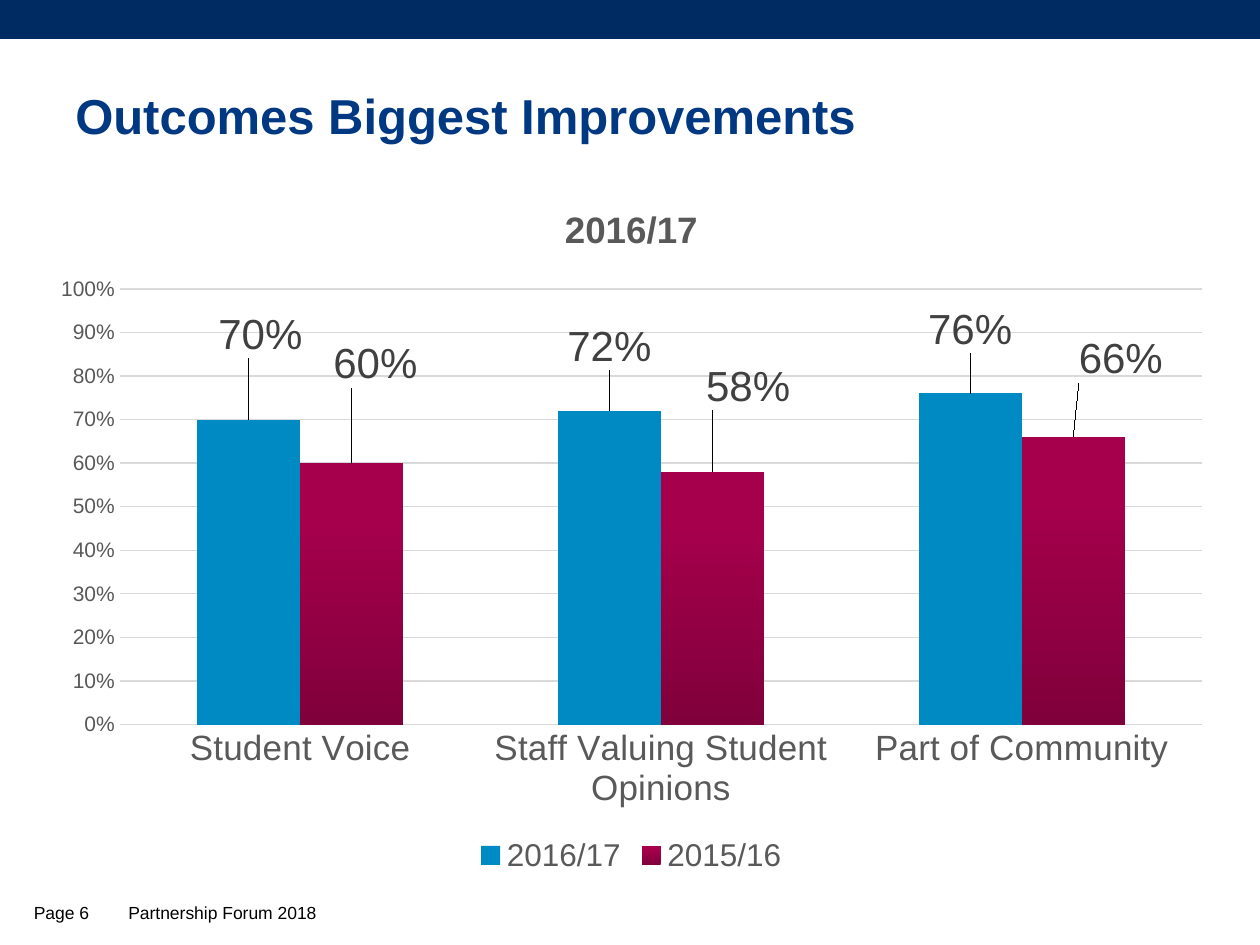
from lxml import etree
from pptx import Presentation
from pptx import util as u
from pptx.chart.data import CategoryChartData
from pptx.dml.color import RGBColor
from pptx.enum import chart as ch, shapes, text
from pptx.oxml import parse_xml
from pptx.oxml.ns import nsdecls, qn

GREY = "595959"
PALE = "D9D9D9"


def paint(code):
    return RGBColor.from_string(code)


def place(parent, **parts):
    layout = parse_xml(f"<c:layout {nsdecls('c')}><c:manualLayout/></c:layout>")
    for key, val in parts.items():
        etree.SubElement(layout[0], qn(f"c:{key}")).set("val", str(val))
    for old in parent.findall(qn("c:layout")):
        parent.remove(old)
    return layout


class Deck:
    face = "Arial"

    def __init__(self, wide, high):
        self.prs = Presentation()
        self.prs.slide_width = u.Inches(wide)
        self.prs.slide_height = u.Inches(high)
        self.slide = self.prs.slides.add_slide(self.prs.slide_layouts[6])

    def style(self, font, size, code, bold=False):
        font.name = self.face
        font.size = u.Pt(size)
        font.bold = bold
        font.color.rgb = paint(code)

    def band(self, box, code):
        shape = self.slide.shapes.add_shape(
            shapes.MSO_SHAPE.RECTANGLE, *map(u.Inches, box))
        shape.shadow.inherit = False
        shape.fill.solid()
        shape.fill.fore_color.rgb = paint(code)
        shape.line.fill.background()

    def label(self, box, words, size, code, bold=False, mid=False):
        frame = self.slide.shapes.add_textbox(*map(u.Inches, box)).text_frame
        frame.word_wrap = True
        if mid:
            frame.vertical_anchor = text.MSO_ANCHOR.MIDDLE
        frame.text = words
        self.style(frame.paragraphs[0].runs[0].font, size, code, bold)

    def chart(self, box, title, cats, rows):
        data = CategoryChartData(number_format="0%")
        data.categories = cats
        for name, vals in rows:
            data.add_series(name, vals)
        chart = self.slide.shapes.add_chart(
            ch.XL_CHART_TYPE.COLUMN_CLUSTERED, *map(u.Inches, box), data).chart
        self.style(chart.font, 10, "000000")
        chart.has_title = True
        chart.chart_title.include_in_layout = False
        frame = chart.chart_title.text_frame
        frame.text = title
        self.style(frame.paragraphs[0].runs[0].font, 21, GREY, True)
        chart.has_legend = True
        chart.legend.position = ch.XL_LEGEND_POSITION.BOTTOM
        chart.legend.include_in_layout = False
        self.style(chart.legend.font, 18, GREY)
        plot = chart.plots[0]
        plot.gap_width = 150
        plot.overlap = 0
        plot.vary_by_categories = False
        area = chart._chartSpace.chart.plotArea
        area.insert(0, place(area, layoutTarget="inner", xMode="edge",
                             yMode="edge", x=0.07, y=0.157, w=0.91, h=0.622))
        self.axes(chart)
        return plot

    def axes(self, chart):
        cat, val = chart.category_axis, chart.value_axis
        for axis, size in ((cat, 20), (val, 12)):
            axis.major_tick_mark = ch.XL_TICK_MARK.NONE
            axis.minor_tick_mark = ch.XL_TICK_MARK.NONE
            self.style(axis.tick_labels.font, size, GREY)
        cat.format.line.color.rgb = paint(PALE)
        cat.format.line.width = u.Pt(1)
        val.format.line.fill.background()
        val.minimum_scale, val.maximum_scale, val.major_unit = 0, 1, 0.1
        val.tick_labels.number_format = "0%"
        val.tick_labels.number_format_is_linked = False
        grid = val.major_gridlines.format.line
        grid.color.rgb = paint(PALE)
        grid.width = u.Pt(0.75)

    def values(self, row, shifts):
        labels = row.data_labels
        labels.show_value = True
        labels.number_format = "0%"
        labels.number_format_is_linked = False
        labels.position = ch.XL_LABEL_POSITION.OUTSIDE_END
        self.style(labels.font, 24, "404040")
        for i, (x, y) in enumerate(shifts):
            mark = row.points[i].data_label
            self.style(mark.font, 24, "404040")
            mark.position = ch.XL_LABEL_POSITION.OUTSIDE_END
            node = row._element.xpath(f".//c:dLbl[c:idx/@val='{i}']")[0]
            node.find(qn("c:idx")).addnext(place(node, x=x, y=y))

    def fade(self, row, stops, angle):
        fill = row.format.fill
        fill.gradient()
        grad = row._element.spPr.find(qn("a:gradFill"))
        steps = "".join(
            f'<a:gs pos="{pos * 1000}"><a:srgbClr val="{code}"/></a:gs>'
            for pos, code in stops)
        grad.getparent().replace(grad, parse_xml(
            f'<a:gradFill {nsdecls("a")} rotWithShape="1"><a:gsLst>{steps}'
            f'</a:gsLst><a:lin ang="{angle * 60000}" scaled="0"/></a:gradFill>'))


def main():
    deck = Deck(10, 7.5)
    deck.band((0, 0, 10, 0.31), "002A62")
    deck.label((0.5, 0.6, 9.07, 0.63), "Outcomes Biggest Improvements",
               28, "003882", bold=True, mid=True)
    plot = deck.chart(
        (0.29, 1.42, 9.44, 5.56), "2016/17",
        ("Student Voice", "Staff Valuing Student Opinions", "Part of Community"),
        (("2016/17", (0.7, 0.72, 0.76)), ("2015/16", (0.6, 0.58, 0.66))))
    new, old = plot.series
    new.format.fill.solid()
    new.format.fill.fore_color.rgb = paint("008AC4")
    deck.fade(old, ((0, "80003B"), (80, "A6004C"), (100, "A6004D")), 270)
    deck.values(new, ((0.01, -0.08), (0, -0.05), (0, -0.05)))
    deck.values(old, ((0.02, -0.1), (0.03, -0.08), (0.04, -0.07)))
    deck.label((0.92, 7.11, 6.62, 0.3), "Partnership Forum 2018", 10, "000000")
    deck.label((0.17, 7.1, 0.74, 0.29), "Page 6", 10, "000000", mid=True)
    deck.prs.save("out.pptx")


if __name__ == "__main__":
    main()
